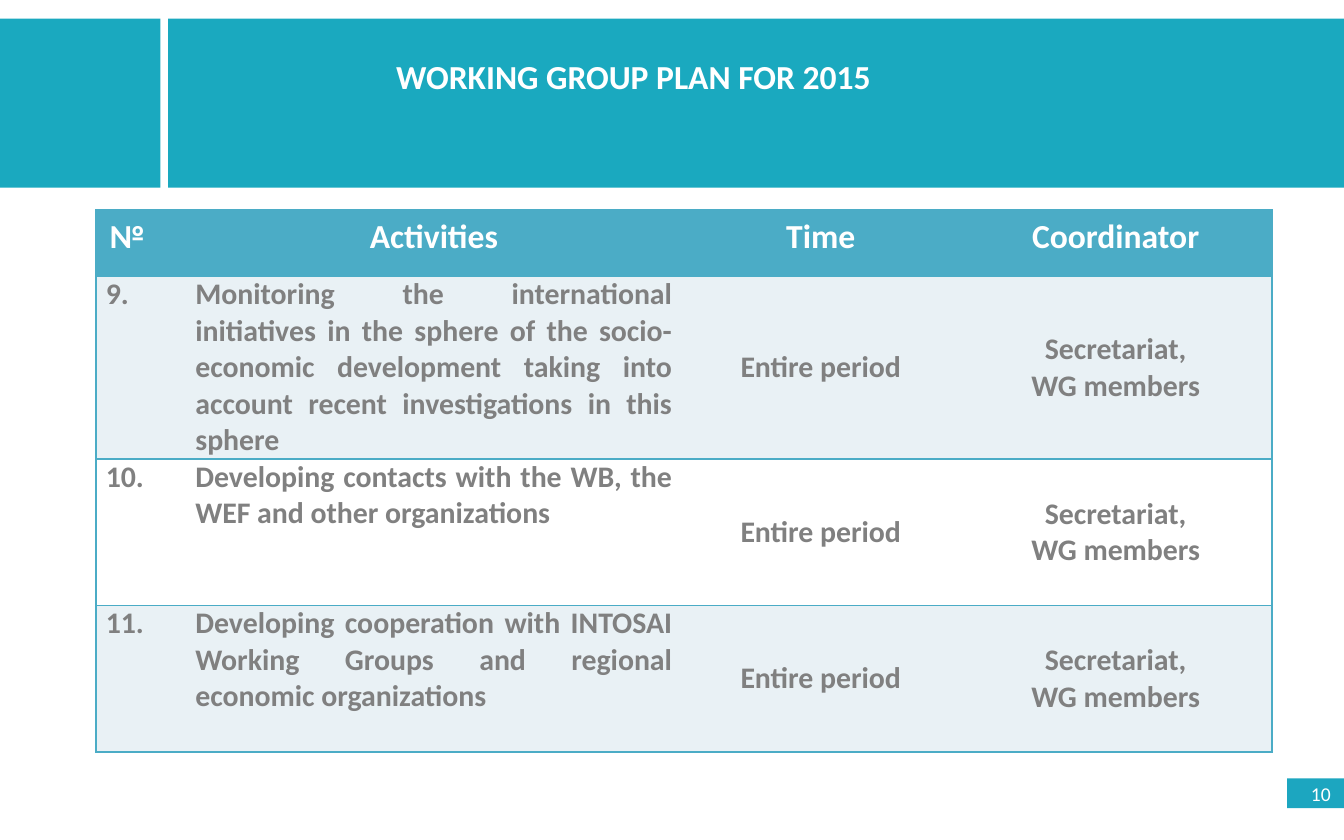
from lxml import etree
from pptx import Presentation
from pptx.dml.color import RGBColor
from pptx.enum import shapes, text
from pptx.oxml import ns
from pptx.util import Pt

TEAL, BLUE, PALE, WHITE, GREY = "1AA9BF", "4BACC6", "E9F1F5", "FFFFFF", "808080"
LEFT, MID, RIGHT, JUST = (text.PP_ALIGN.LEFT, text.PP_ALIGN.CENTER,
                          text.PP_ALIGN.RIGHT, text.PP_ALIGN.JUSTIFY)
TOP, HALF = text.MSO_ANCHOR.TOP, text.MSO_ANCHOR.MIDDLE

HEADS = ["№", "Activities", "Time", "Coordinator"]
TASKS = [
    "Monitoring the international initiatives in the sphere of the "
    "socio-economic development taking into account recent investigations "
    "in this sphere",
    "Developing contacts with the WB, the WEF and other organizations",
    "Developing cooperation with INTOSAI Working Groups and regional "
    "economic organizations",
]
FIRST = 9
WIDTHS = [48, 266, 148.5, 167.5]
HEIGHTS = [35.5, 96, 78.5, 78.5]


def color(code):
    return RGBColor.from_string(code)


def write(frame, words, size=16, tint=GREY, bold=True, align=LEFT):
    """Fill a text frame, one paragraph for each line of words."""
    frame.text = words
    for para in frame.paragraphs:
        para.alignment = align
        font = para.font
        font.name, font.size, font.bold = "Calibri", Pt(size), bold
        font.color.rgb = color(tint)


def block(slide, left, top, width, height, fill=TEAL):
    box = slide.shapes.add_shape(shapes.MSO_SHAPE.RECTANGLE, Pt(left), Pt(top),
                                 Pt(width), Pt(height))
    box.shadow.inherit = False
    box.fill.solid()
    box.fill.fore_color.rgb = color(fill)
    box.line.fill.background()
    return box


def banner(slide, left, top, width, height):
    side, gap = 86, 4
    block(slide, left, top, side, height)
    block(slide, left + side + gap, top, width - side - gap, height)
    title = slide.shapes.title
    title.left, title.top = Pt(left + 205), Pt(top + 16.5)
    title.width, title.height = Pt(271.5), Pt(29)
    frame = title.text_frame
    frame.word_wrap = False
    frame.auto_size = text.MSO_AUTO_SIZE.NONE
    frame.vertical_anchor = TOP
    write(frame, "WORKING GROUP PLAN FOR 2015", size=18, tint=WHITE)
    # Bring the title in front of the two bars
    slide.shapes._spTree.append(title._element)


def border(cell, sides):
    """Draw the named sides (of L, R, T, B) and clear the others."""
    props = cell._tc.get_or_add_tcPr()
    for side in "LRTB":
        line = etree.SubElement(props, ns.qn(f"a:ln{side}"), w=str(Pt(1)))
        if side in sides:
            fill = etree.SubElement(line, ns.qn("a:solidFill"))
            etree.SubElement(fill, ns.qn("a:srgbClr"), val=BLUE)
        else:
            etree.SubElement(line, ns.qn("a:noFill"))


def plan(slide, left, top):
    rows = [HEADS] + [
        [f"{num}.", task, "Entire period", "Secretariat,\nWG members"]
        for num, task in enumerate(TASKS, FIRST)]
    table = slide.shapes.add_table(len(rows), len(HEADS), Pt(left), Pt(top),
                                   Pt(sum(WIDTHS)), Pt(sum(HEIGHTS))).table
    table.first_row = table.horz_banding = False
    for col, width in zip(table.columns, WIDTHS):
        col.width = Pt(width)
    for r, (row, height) in enumerate(zip(rows, HEIGHTS)):
        table.rows[r].height = Pt(height)
        for c, words in enumerate(row):
            cell = table.cell(r, c)
            border(cell, "TB" + {0: "L", len(row) - 1: "R"}.get(c, ""))
            cell.fill.solid()
            if r == 0:
                cell.fill.fore_color.rgb = color(BLUE)
                write(cell.text_frame, words, size=18, tint=WHITE,
                      align=MID if c else LEFT)
                continue
            cell.fill.fore_color.rgb = color(PALE if r % 2 else WHITE)
            cell.margin_left = cell.margin_right = Pt(5.2)
            cell.margin_top = cell.margin_bottom = 0
            cell.vertical_anchor = HALF if c > 1 else TOP
            write(cell.text_frame, words, align=[LEFT, JUST, MID, MID][c])


def number(slide, left, top, width, height):
    box = block(slide, left, top, width, height, fill="1CA6C0")
    box.text_frame.vertical_anchor = HALF
    write(box.text_frame, "10", size=10.5, tint=WHITE, bold=False, align=RIGHT)


def main():
    deck = Presentation()
    deck.slide_width, deck.slide_height = Pt(720), Pt(450)
    slide = deck.slides.add_slide(deck.slide_layouts[5])
    banner(slide, 0, 10, 720, 90.5)
    number(slide, 689.5, 417, 30.5, 16)
    plan(slide, 51.5, 112.5)
    deck.save("out.pptx")


if __name__ == "__main__":
    main()
